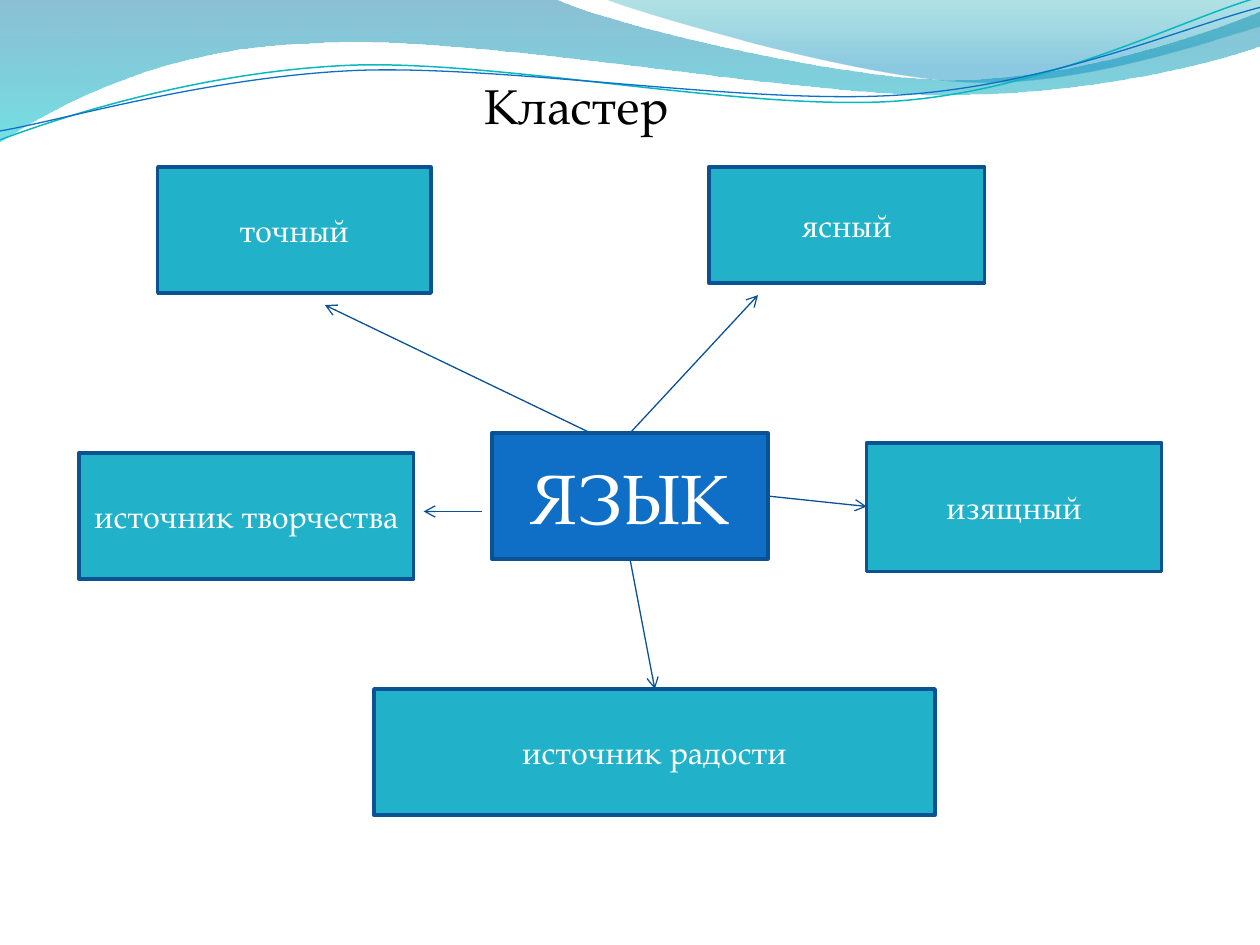
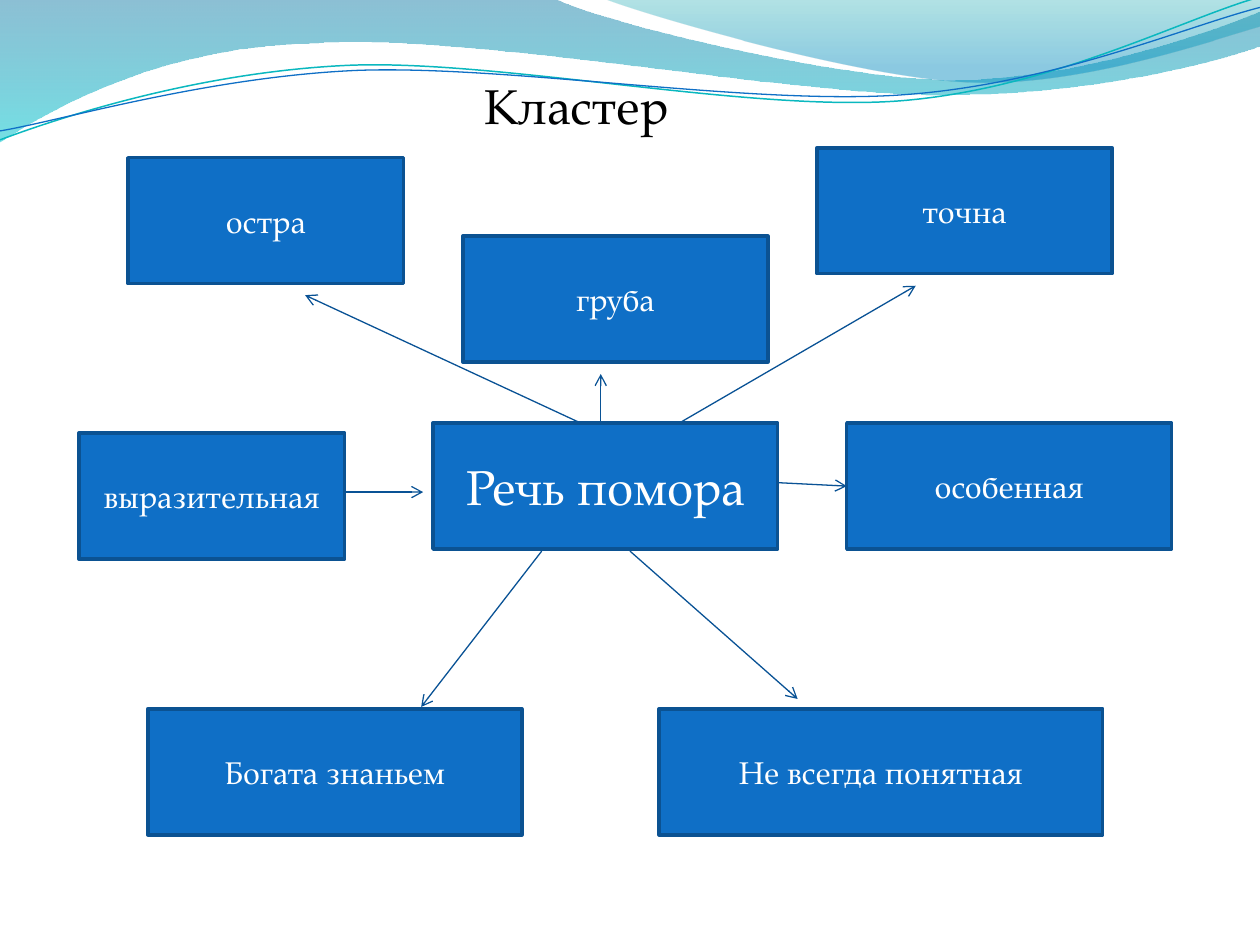
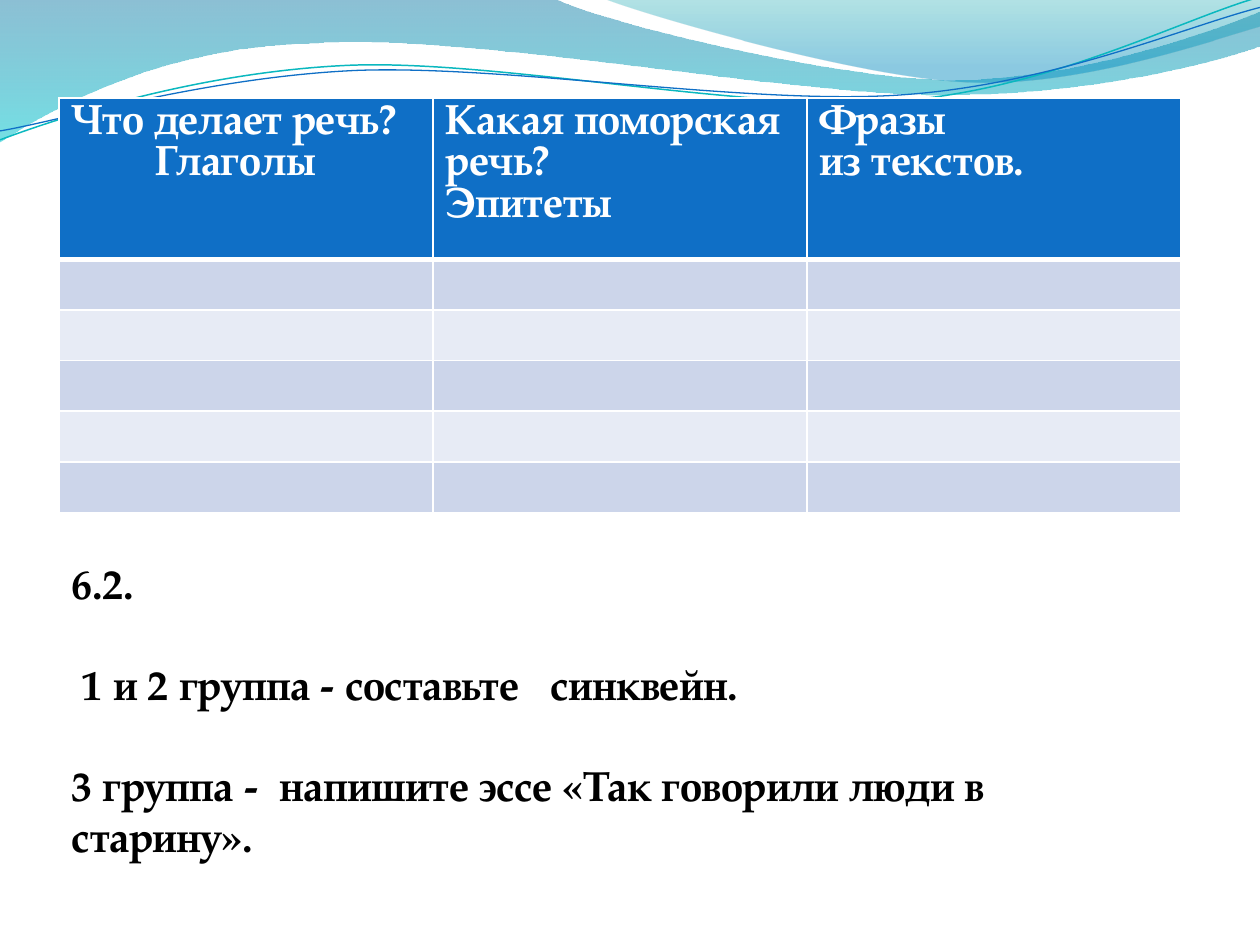
"""Build three slides on language: two cluster diagrams and a table with a group task."""
from dataclasses import dataclass
from typing import Optional

import lxml.etree
import pptx
import pptx.dml.color
import pptx.enum.shapes
import pptx.enum.text
import pptx.oxml.ns
import pptx.util

Cm = pptx.util.Cm
Pt = pptx.util.Pt
qn = pptx.oxml.ns.qn

FONT = "TeX Gyre Pagella"
COLORS = {
    "blue": "0F6FC6",
    "teal": "21B2C9",
    "border": "0B5292",
    "arrow": "095295",
    "wave_line": "0AB8BF",
    "wave_top": "0074A1",
    "wave_bottom": "00C6CF",
    "crest_top": "00A1A9",
    "crest_bottom": "008BBF",
    "band_dark": "CCD5EA",
    "band_light": "E7EBF5",
    "white": "FFFFFF",
    "black": "000000",
}


@dataclass(frozen=True)
class Stop:
    position: float
    color: str
    opacity: int


@dataclass(frozen=True)
class Wave:
    start: tuple
    segments: tuple
    stops: tuple = ()
    line_color: str = ""
    line_width: float = 0
    rotation: float = 0


@dataclass(frozen=True)
class Box:
    text: str
    left: float
    top: float
    width: float
    height: float = 2.54
    fill: str = "blue"
    size: int = 18


@dataclass(frozen=True)
class Arrow:
    begin: tuple
    end: tuple


@dataclass(frozen=True)
class Line:
    text: str
    indent: float = 0
    space_before: float = 0
    tab: Optional[float] = None


WAVES = (
    Wave(
        (0, 0),
        (
            (11.18, -0.03),
            (12.09, 0.43, 16.87, 1.6, 19.25, 1.6),
            (21.67, 1.6, 24.33, 0.66, 25.4, 0.23),
            (25.43, 0.91),
            (24.97, 1.12, 22.1, 1.93, 18.95, 1.91),
            (15.8, 1.91, 9.7, 0.71, 6.53, 0.86),
            (3.28, 0.91, 1.17, 2.11, -0.03, 2.87),
            (0, 0),
        ),
        stops=(Stop(0, "wave_top", 45), Stop(1, "wave_bottom", 55)),
    ),
    Wave(
        (12.17, -0.03),
        (
            (12.93, 0.28, 17.32, 1.57, 19.53, 1.65),
            (21.74, 1.75, 24.41, 0.81, 25.4, 0.53),
            (25.4, 0),
            (12.17, -0.03),
        ),
        stops=(Stop(0, "crest_top", 30), Stop(0.8, "crest_bottom", 45)),
    ),
    Wave(
        (-0.05, 2.22),
        (
            (1.19, 1.82, 4.02, 1.04, 7.05, 1.05),
            (10.05, 1.07, 15.02, 2.37, 18.08, 2.29),
            (21.13, 2.2, 23.87, 0.91, 25.41, 0.55),
        ),
        line_color="wave_line",
        line_width=0.85,
        rotation=357.3,
    ),
    Wave(
        (-0.04, 2.04),
        (
            (1.16, 1.9, 4.18, 1.15, 7.2, 1.16),
            (10.25, 1.19, 15.13, 2.25, 18.18, 2.17),
            (21.21, 2.1, 23.93, 1.06, 25.45, 0.75),
        ),
        line_color="blue",
        line_width=0.75,
        rotation=357.3,
    ),
)

LANGUAGE_BOXES = (
    Box("ЯЗЫК", 9.92, 8.73, 5.56, size=40),
    Box("точный", 3.18, 3.37, 5.51, fill="teal"),
    Box("источник творчества", 1.59, 9.13, 6.75, fill="teal"),
    Box("источник радости", 7.54, 13.89, 11.31, fill="teal"),
    Box("изящный", 17.47, 8.93, 5.95, 2.59, fill="teal"),
    Box("ясный", 14.29, 3.37, 5.56, 2.34, fill="teal"),
)
LANGUAGE_ARROWS = (
    Arrow((12.7, 8.73), (15.28, 5.95)),
    Arrow((11.91, 8.73), (6.55, 6.15)),
    Arrow((15.48, 10), (17.47, 10.21)),
    Arrow((9.72, 10.31), (8.54, 10.31)),
    Arrow((12.7, 11.27), (13.2, 13.89)),
)
SPEECH_BOXES = (
    Box("Речь помора", 8.73, 8.53, 6.95, size=28),
    Box("Не всегда понятная", 13.29, 14.29, 8.94),
    Box("Богата знаньем", 2.98, 14.29, 7.54),
    Box("особенная", 17.07, 8.53, 6.55),
    Box("выразительная", 1.59, 8.73, 5.36),
    Box("точна", 16.47, 2.98, 5.95),
    Box("груба", 9.33, 4.76, 6.15),
    Box("остра", 2.58, 3.18, 5.56),
)
SPEECH_ARROWS = (
    Arrow((12.11, 8.53), (12.11, 7.54)),
    Arrow((15.68, 9.73), (17.07, 9.8)),
    Arrow((13.69, 8.53), (18.46, 5.76)),
    Arrow((11.71, 8.53), (6.15, 5.95)),
    Arrow((6.95, 9.92), (8.53, 9.92)),
    Arrow((10.92, 11.11), (8.49, 14.25)),
    Arrow((12.7, 11.11), (16.08, 14.09)),
)

HEADERS = (
    (Line("Что делает речь?"), Line("Глаголы", indent=1.69)),
    (Line("Какая поморская речь?"), Line("Эпитеты")),
    (Line("Фразы"), Line("из текстов.")),
)
BODY_ROWS = 5
TASK = (
    Line("6.2."),
    Line(" 1 и 2 группа - составьте\tсинквейн.", space_before=28.9, tab=9.66),
    Line("3 группа -\tнапишите эссе «Так говорили люди в старину».", space_before=28.9, tab=4.19),
)


def rgb(name: str) -> pptx.dml.color.RGBColor:
    return pptx.dml.color.RGBColor.from_string(COLORS[name])


def format_runs(paragraph, size: float, color: str, bold: bool = False) -> None:
    for run in paragraph.runs:
        run.font.name = FONT
        run.font.size = Pt(size)
        run.font.bold = bold
        run.font.color.rgb = rgb(color)


def write_lines(text_frame, lines: tuple, size: float, color: str,
                bold: bool = False, spacing: Optional[float] = None) -> None:
    text_frame.word_wrap = True
    text_frame.text = "\n".join(line.text for line in lines)
    for paragraph, line in zip(text_frame.paragraphs, lines):
        format_runs(paragraph, size, color, bold)
        if spacing:
            paragraph.line_spacing = spacing
        if line.space_before:
            paragraph.space_before = Pt(line.space_before)
        properties = paragraph._p.get_or_add_pPr()
        if line.indent:
            properties.set("marL", str(Cm(line.indent)))
        if line.tab:
            tabs = lxml.etree.SubElement(properties, qn("a:tabLst"))
            lxml.etree.SubElement(tabs, qn("a:tab"), pos=str(Cm(line.tab)), algn="l")


def add_text(slide, lines: tuple, bounds: tuple, size: float, bold: bool = False) -> None:
    shape = slide.shapes.add_textbox(*map(Cm, bounds))
    write_lines(shape.text_frame, lines, size, "black", bold)
    shape.text_frame.auto_size = pptx.enum.text.MSO_AUTO_SIZE.SHAPE_TO_FIT_TEXT


def bend_segments(shape, segments: tuple) -> None:
    straight_lines = list(shape.element.spPr.iter(qn("a:lnTo")))
    for straight_line, segment in zip(straight_lines, segments):
        if len(segment) == 2:
            continue
        curve = lxml.etree.Element(qn("a:cubicBezTo"))
        for x, y in zip(segment[::2], segment[1::2]):
            lxml.etree.SubElement(
                curve, qn("a:pt"), x=str(Cm(x) - shape.left), y=str(Cm(y) - shape.top)
            )
        straight_line.getparent().replace(straight_line, curve)


def add_wave(slide, wave: Wave):
    corners = [(Cm(segment[-2]), Cm(segment[-1])) for segment in wave.segments]
    builder = slide.shapes.build_freeform(*map(Cm, wave.start))
    builder.add_line_segments(corners, close=bool(wave.stops))
    shape = builder.convert_to_shape()
    bend_segments(shape, wave.segments)
    shape.shadow.inherit = False
    shape.rotation = wave.rotation
    if not wave.stops:
        shape.fill.background()
        shape.line.color.rgb = rgb(wave.line_color)
        shape.line.width = Pt(wave.line_width)
        return shape
    shape.line.fill.background()
    shape.fill.gradient()
    shape.fill.gradient_angle = 270
    for gradient_stop, stop in zip(shape.fill.gradient_stops, wave.stops):
        gradient_stop.position = stop.position
        gradient_stop.color.rgb = rgb(stop.color)
    colors = list(shape.element.spPr.iter(qn("a:srgbClr")))
    for color, stop in zip(colors, wave.stops):
        lxml.etree.SubElement(color, qn("a:alpha"), val=str(stop.opacity * 1000))
    return shape


def add_box(slide, box: Box) -> None:
    shape = slide.shapes.add_shape(
        pptx.enum.shapes.MSO_SHAPE.RECTANGLE,
        *map(Cm, (box.left, box.top, box.width, box.height)),
    )
    shape.shadow.inherit = False
    shape.fill.solid()
    shape.fill.fore_color.rgb = rgb(box.fill)
    shape.line.color.rgb = rgb("border")
    shape.line.width = Pt(2)
    write_lines(shape.text_frame, (Line(box.text),), box.size, "white")
    shape.text_frame.vertical_anchor = pptx.enum.text.MSO_ANCHOR.MIDDLE
    shape.text_frame.paragraphs[0].alignment = pptx.enum.text.PP_ALIGN.CENTER


def add_arrow(slide, arrow: Arrow) -> None:
    connector = slide.shapes.add_connector(
        pptx.enum.shapes.MSO_CONNECTOR.STRAIGHT, *map(Cm, arrow.begin + arrow.end)
    )
    connector.line.color.rgb = rgb("arrow")
    connector.line.width = Pt(0.75)
    properties = connector.element.spPr
    lxml.etree.SubElement(properties.find(qn("a:ln")), qn("a:tailEnd"), type="arrow")
    lxml.etree.SubElement(properties, qn("a:effectLst"))


def style_cell(cell, fill: str, top: float, bottom: float) -> None:
    cell.fill.solid()
    cell.fill.fore_color.rgb = rgb(fill)
    properties = cell._tc.get_or_add_tcPr()
    widths = {"a:lnL": 1, "a:lnR": 1, "a:lnT": top, "a:lnB": bottom}
    for index, (tag, width) in enumerate(widths.items()):
        border = lxml.etree.Element(qn(tag), w=str(Pt(width)))
        solid = lxml.etree.SubElement(border, qn("a:solidFill"))
        lxml.etree.SubElement(solid, qn("a:srgbClr"), val=COLORS["white"])
        properties.insert(index, border)


def add_speech_table(slide) -> None:
    heights = [3.25] + [1.02] * BODY_ROWS
    table = slide.shapes.add_table(
        len(heights), len(HEADERS), *map(Cm, (1.19, 1.98, 22.62, sum(heights)))
    ).table
    for column in table.columns:
        column.width = Cm(7.54)
    for row_index, (row, height) in enumerate(zip(table.rows, heights)):
        row.height = Cm(height)
        for cell, header in zip(row.cells, HEADERS):
            if row_index == 0:
                write_lines(cell.text_frame, header, 24, "white", bold=True, spacing=1.0)
                style_cell(cell, "blue", 1, 3)
            else:
                cell.margin_top = cell.margin_bottom = Cm(0)
                band = "band_dark" if row_index % 2 else "band_light"
                style_cell(cell, band, 3 if row_index == 1 else 1, 1)


def add_slide(presentation):
    return presentation.slides.add_slide(presentation.slide_layouts[6])


def move_waves_to_layout(slide) -> None:
    layout = slide.slide_layout
    for placeholder in list(layout.placeholders):
        placeholder.element.getparent().remove(placeholder.element)
    for shape in [add_wave(slide, wave) for wave in WAVES]:
        layout.shapes.element.append(shape.element)


def fill_cluster(slide, boxes: tuple, arrows: tuple) -> None:
    add_text(slide, (Line("Кластер"),), (9.52, 1.4, 4.37, 1.45), 28)
    for box in boxes:
        add_box(slide, box)
    for arrow in arrows:
        add_arrow(slide, arrow)


def fill_task(slide) -> None:
    add_speech_table(slide)
    add_text(slide, TASK, (1.19, 11.12, 22.63, 7.44), 24, bold=True)


def main() -> None:
    presentation = pptx.Presentation()
    presentation.slide_width = Cm(25.4)
    presentation.slide_height = Cm(19.05)
    language_slide, speech_slide, task_slide = (add_slide(presentation) for _ in range(3))
    move_waves_to_layout(language_slide)
    fill_cluster(language_slide, LANGUAGE_BOXES, LANGUAGE_ARROWS)
    fill_cluster(speech_slide, SPEECH_BOXES, SPEECH_ARROWS)
    fill_task(task_slide)
    presentation.save("out.pptx")


if __name__ == "__main__":
    main()
